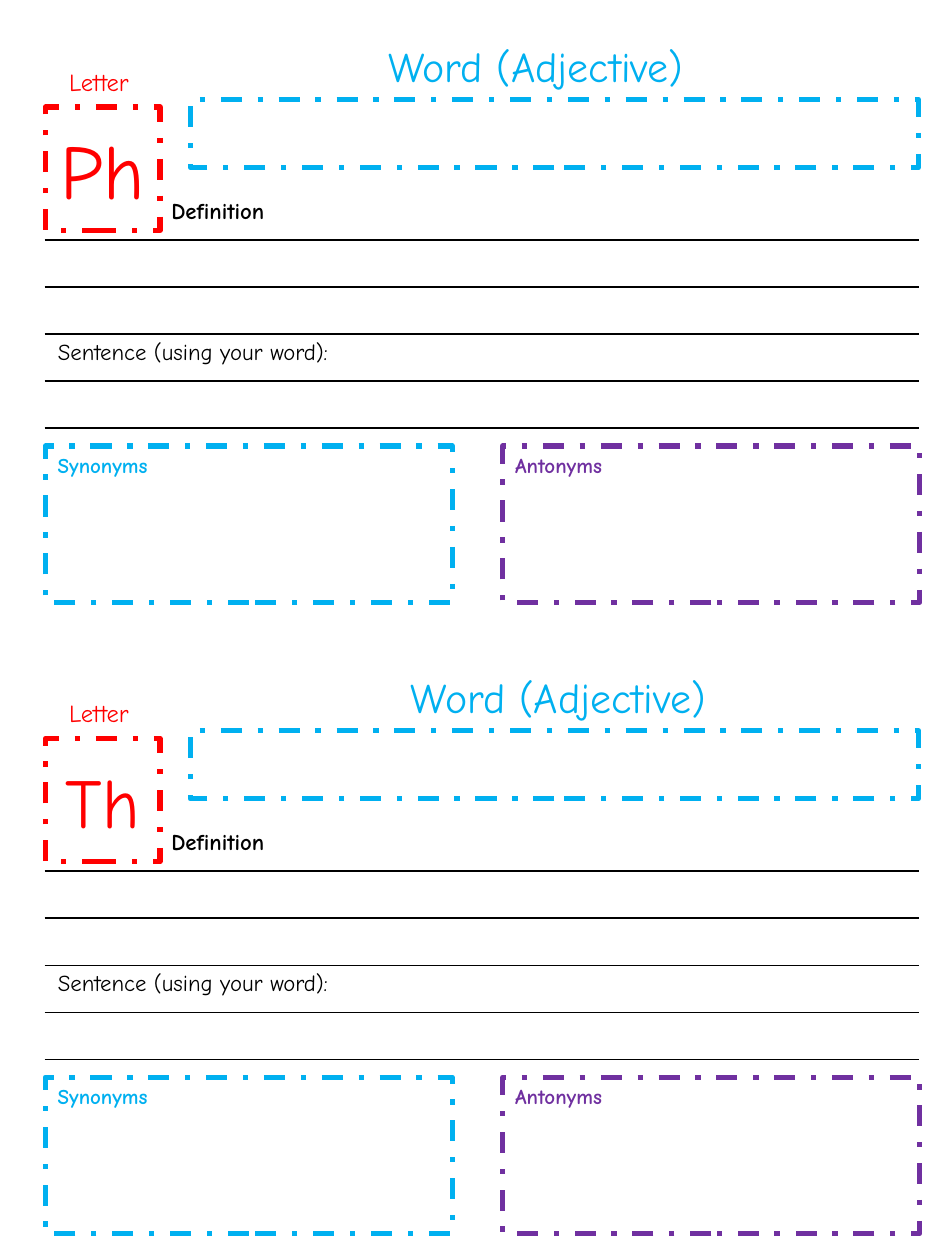
import dataclasses

import pptx
import pptx.dml.color
import pptx.enum.dml
import pptx.enum.shapes
import pptx.enum.text
import pptx.oxml
import pptx.oxml.ns
import pptx.util

Inches = pptx.util.Inches
Pt = pptx.util.Pt
Align = pptx.enum.text.PP_ALIGN
Anchor = pptx.enum.text.MSO_ANCHOR


@dataclasses.dataclass(frozen=True)
class Theme:
    font: str = "Comic Neue"
    red: str = "FF0000"
    blue: str = "00B0F0"
    purple: str = "7030A0"
    black: str = "000000"
    white: str = "FFFFFF"
    heading_size: int = 24
    label_size: int = 14
    table_size: int = 13
    box_size: int = 12
    frame_width: int = 3
    rule_width: int = 1


def rgb(value):
    return pptx.dml.color.RGBColor.from_string(value)


def write_text(text_frame, text, *, font, size, color, bold=False,
               align=Align.LEFT, anchor=Anchor.TOP):
    """Put one formatted paragraph into a text frame."""
    text_frame.vertical_anchor = anchor
    paragraph = text_frame.paragraphs[0]
    paragraph.alignment = align
    run = paragraph.add_run()
    run.text = text
    run.font.name = font
    run.font.size = Pt(size)
    run.font.bold = bold
    run.font.color.rgb = rgb(color)


class Worksheet:
    """Holds the theme and the slide that is being filled."""

    def __init__(self, slide, theme):
        self.slide = slide
        self.theme = theme

    def title(self, text, left, top, width, height):
        shape = self.slide.shapes.title
        shape.left, shape.top = Inches(left), Inches(top)
        shape.width, shape.height = Inches(width), Inches(height)
        self.fill_label(shape, text, self.theme.heading_size, self.theme.blue)

    def label(self, text, left, top, width, height, size, color):
        shape = self.slide.shapes.add_textbox(
            Inches(left), Inches(top), Inches(width), Inches(height))
        self.fill_label(shape, text, size, color)

    def fill_label(self, shape, text, size, color):
        shape.text_frame.word_wrap = True
        shape.text_frame.auto_size = pptx.enum.text.MSO_AUTO_SIZE.NONE
        write_text(shape.text_frame, text, font=self.theme.font, size=size,
                   color=color, align=Align.CENTER)

    def frame(self, left, top, width, height, color, text="", fill=None, **text_format):
        shape = self.slide.shapes.add_shape(
            pptx.enum.shapes.MSO_SHAPE.RECTANGLE,
            Inches(left), Inches(top), Inches(width), Inches(height))
        shape.shadow.inherit = False
        if fill:
            shape.fill.solid()
            shape.fill.fore_color.rgb = rgb(fill)
        else:
            shape.fill.background()
        shape.line.color.rgb = rgb(color)
        shape.line.width = Pt(self.theme.frame_width)
        shape.line.dash_style = pptx.enum.dml.MSO_LINE.DASH_DOT
        if text:
            write_text(shape.text_frame, text, font=self.theme.font,
                       color=color, **text_format)

    def border(self, cell, side, color):
        namespace = pptx.oxml.ns.nsdecls("a")
        width = Pt(self.theme.rule_width)
        cell._tc.get_or_add_tcPr().append(pptx.oxml.parse_xml(
            f'<a:{side} {namespace} w="{width}"><a:solidFill>'
            f'<a:srgbClr val="{color}"/></a:solidFill></a:{side}>'))

    def writing_lines(self, left, top, width, height, row_texts):
        theme = self.theme
        graphic_frame = self.slide.shapes.add_table(
            len(row_texts), 2, Inches(left), Inches(top), Inches(width), Inches(height))
        table = graphic_frame.table
        table.first_row = table.horz_banding = False
        for row_index, (text, indent) in enumerate(row_texts):
            for column_index in range(2):
                cell = table.cell(row_index, column_index)
                # Borders come before the fill in the cell properties
                self.border(cell, "lnL", theme.white)
                self.border(cell, "lnR", theme.white)
                self.border(cell, "lnT", theme.black if row_index else theme.white)
                self.border(cell, "lnB", theme.black)
                cell.fill.solid()
                cell.fill.fore_color.rgb = rgb(theme.white)
                if text and column_index == 0:
                    cell.margin_left = Inches(indent)
                    write_text(cell.text_frame, text, font=theme.font,
                               size=theme.table_size, color=theme.black,
                               bold=row_index == 0)
                else:
                    cell.margin_top = cell.margin_bottom = 0


def add_card(sheet, top, letters, letter_size):
    """Draw one vocabulary card, all but its heading."""
    theme = sheet.theme
    left = 0.36

    # Definition and sentence lines; the first label clears the letter box
    sheet.writing_lines(left, top + 1.53, 6.93, 1.87, [
        ("Definition", 1), ("", 0), ("", 0),
        ("Sentence (using your word):", 0.1), ("", 0)])

    # Letter box with its label
    sheet.frame(left, top + 0.85, 0.91, 0.98, theme.red, letters, fill=theme.white,
                size=letter_size, align=Align.CENTER, anchor=Anchor.MIDDLE)
    sheet.label("Letter", left - 0.03, top + 0.48, 0.91, 0.34,
                theme.label_size, theme.red)

    # Word box
    sheet.frame(1.51, top + 0.79, 5.78, 0.54, theme.blue)

    # Synonym and antonym boxes
    for text, box_left, width, color in (
            ("Synonyms", left, 3.23, theme.blue),
            ("Antonyms", 3.99, 3.31, theme.purple)):
        sheet.frame(box_left, top + 3.54, width, 1.24, color, text,
                    size=theme.box_size, bold=True)


def main():
    presentation = pptx.Presentation()
    presentation.slide_width = Inches(7.5)
    presentation.slide_height = Inches(10)
    slide = presentation.slides.add_slide(presentation.slide_layouts[5])
    theme = Theme()
    sheet = Worksheet(slide, theme)

    # Two cards, one above the other
    card_pitch = 5.01
    heading = "Word (Adjective)"
    sheet.title(heading, 2.57, 0.27, 3.36, 0.5)
    add_card(sheet, 0, "Ph", 44)
    sheet.label(heading, 2.67, card_pitch + 0.27, 3.52, 0.5,
                theme.heading_size, theme.blue)
    add_card(sheet, card_pitch, "Th", 40)

    presentation.save("out.pptx")


if __name__ == "__main__":
    main()
